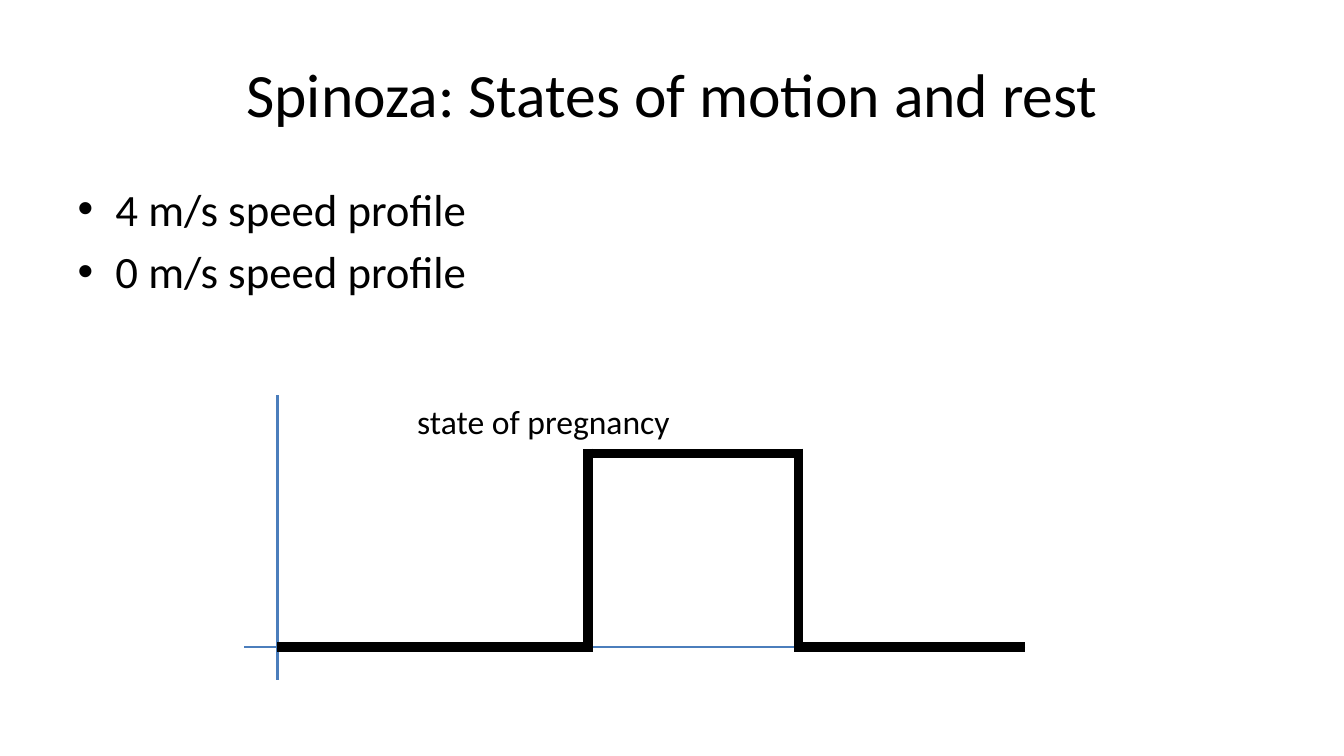
from dataclasses import dataclass

from lxml import etree
from pptx import Presentation
from pptx.dml.color import RGBColor
from pptx.enum.shapes import MSO_CONNECTOR
from pptx.enum.text import MSO_ANCHOR, PP_ALIGN
from pptx.oxml.ns import qn
from pptx.util import Inches, Pt

STRAIGHT = MSO_CONNECTOR.STRAIGHT
MIDDLE, TOP = MSO_ANCHOR.MIDDLE, MSO_ANCHOR.TOP
LEFT, CENTER = PP_ALIGN.LEFT, PP_ALIGN.CENTER


@dataclass(frozen=True)
class Theme:
    font: str = "Calibri"
    text: RGBColor = RGBColor(0x00, 0x00, 0x00)
    axis: RGBColor = RGBColor(0x4B, 0x7E, 0xBC)
    title_size: float = 44
    body_size: float = 32
    label_size: float = 24
    axis_width: float = 1.75
    pulse_width: float = 6.75


THEME = Theme()


def place(shape, left, top, width, height):
    box = {"left": left, "top": top, "width": width, "height": height}
    for name, value in box.items():
        setattr(shape, name, Inches(value))


def write_text(shape, lines, size, alignment, anchor):
    frame = shape.text_frame
    frame.word_wrap = True
    frame.vertical_anchor = anchor
    frame.text = "\n".join(lines)
    font_format = {"name": THEME.font, "size": Pt(size)}
    for paragraph in frame.paragraphs:
        paragraph.alignment = alignment
        for run in paragraph.runs:
            for name, value in font_format.items():
                setattr(run.font, name, value)
            run.font.color.rgb = THEME.text


def add_line(slide, start, end, color, width):
    line = slide.shapes.add_connector(
        STRAIGHT, *(Inches(value) for value in (*start, *end)))
    line.line.color.rgb = color
    line.line.width = Pt(width)
    etree.SubElement(line._element.spPr, qn("a:effectLst"))


def add_axes(slide, origin_x, base_y, right):
    for start, end in (
        ((origin_x, 3.92), (origin_x, 6.75)),
        ((right, base_y), (2.42, base_y)),
    ):
        add_line(slide, start, end, THEME.axis, THEME.axis_width)


def add_pulse(slide, origin_x, base_y, right):
    rise, fall, high_y = 5.83, 7.92, 4.5
    overlap = 0.05  # uprights reach past the levels to square the corners
    levels = [
        ((origin_x, base_y), (rise, base_y)),
        ((rise, high_y), (fall, high_y)),
        ((fall, base_y), (right, base_y)),
    ]
    uprights = [((x, high_y - overlap), (x, base_y + overlap))
                for x in (rise, fall)]
    for start, end in levels + uprights:
        add_line(slide, start, end, THEME.text, THEME.pulse_width)


def main():
    presentation = Presentation()
    presentation.slide_width = Inches(13.33)
    presentation.slide_height = Inches(7.5)
    slide = presentation.slides.add_slide(presentation.slide_layouts[1])

    # Title and list
    title, body = slide.placeholders
    place(title, 0.67, 0.3, 12, 1.25)
    write_text(title, ["Spinoza: States of motion and rest"],
               THEME.title_size, CENTER, MIDDLE)
    place(body, 0.67, 1.75, 12, 4.95)
    write_text(body, ["4 m/s speed profile", "0 m/s speed profile"],
               THEME.body_size, LEFT, TOP)

    # Label above the pulse
    label = slide.shapes.add_textbox(
        Inches(4.04), Inches(3.9), Inches(2.9), Inches(0.55))
    write_text(label, ["state of pregnancy"], THEME.label_size, LEFT, MIDDLE)

    # Step diagram
    frame = {"origin_x": 2.75, "base_y": 6.42, "right": 10.17}
    add_axes(slide, **frame)
    add_pulse(slide, **frame)

    presentation.save("out.pptx")


if __name__ == "__main__":
    main()
